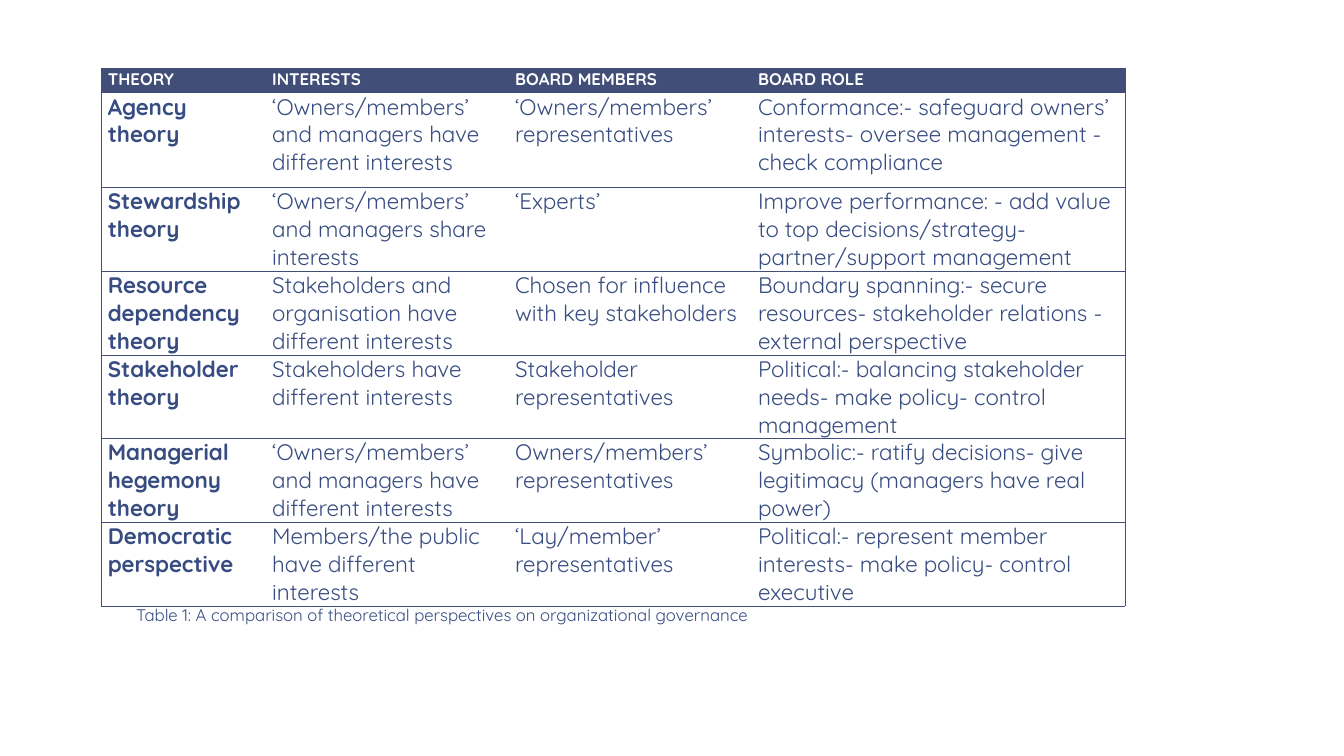
"""Build a slide with a table comparing theories of organizational governance."""
from lxml.etree import SubElement
from pptx import Presentation
from pptx.dml.color import RGBColor
from pptx.enum.text import MSO_ANCHOR, MSO_AUTO_SIZE
from pptx.oxml.ns import qn
from pptx.util import Inches, Pt

HEADERS = ["THEORY", "INTERESTS", "BOARD MEMBERS", "BOARD ROLE"]
THEORIES = [
    ("Agency theory", "‘Owners/members’ and managers have different interests",
     "‘Owners/members’ representatives",
     "Conformance:- safeguard owners’ interests- oversee management - check compliance"),
    ("Stewardship theory", "‘Owners/members’ and managers share interests",
     "‘Experts’",
     "Improve performance: - add value to top decisions/strategy- partner/support management"),
    ("Resource dependency theory", "Stakeholders and organisation have different interests",
     "Chosen for influence with key stakeholders",
     "Boundary spanning:- secure resources- stakeholder relations - external perspective"),
    ("Stakeholder theory", "Stakeholders have different interests",
     "Stakeholder representatives",
     "Political:- balancing stakeholder needs- make policy- control management"),
    ("Managerial hegemony theory", "‘Owners/members’ and managers have different interests",
     "Owners/members’ representatives",
     "Symbolic:- ratify decisions- give legitimacy (managers have real power)"),
    ("Democratic perspective", "Members/the public have different interests",
     "‘Lay/member’ representatives",
     "Political:- represent member interests- make policy- control executive"),
]
CAPTION = "Table 1: A comparison of theoretical perspectives on organizational governance"
COLUMN_WIDTHS = [1.63, 2.41, 2.41, 3.71]
ROW_HEIGHTS = [0.24, 0.94] + [0.83] * 5
FONT, INK, RULE, WHITE = "Quicksand", "374C81", "414E77", "FFFFFF"


def color(value):
    return RGBColor.from_string(value)


def add_span(para, text, size, ink, bold=False):
    span = para.add_run()
    span.text = text
    span.font.name = FONT
    span.font.size = Pt(size)
    span.font.bold = bold
    span.font.color.rgb = color(ink)


def set_borders(cell, first, last):
    properties = cell._tc.get_or_add_tcPr()
    for side, shown in (("L", first), ("R", last), ("T", True), ("B", True)):
        line = SubElement(properties, qn(f"a:ln{side}"), w=str(Pt(0.5)))
        if shown:
            fill = SubElement(line, qn("a:solidFill"))
            SubElement(fill, qn("a:srgbClr"), val=RULE)
        else:
            SubElement(line, qn("a:noFill"))


def add_theory_table(page):
    rows = [HEADERS] + THEORIES
    frame = page.shapes.add_table(
        len(rows), len(HEADERS), Inches(1), Inches(0.68),
        Inches(sum(COLUMN_WIDTHS)), Inches(sum(ROW_HEIGHTS)))
    table = frame.table
    table.horz_banding = False
    for column, width in zip(table.columns, COLUMN_WIDTHS):
        column.width = Inches(width)
    for row, height in zip(table.rows, ROW_HEIGHTS):
        row.height = Inches(height)
    for r, texts in enumerate(rows):
        header = r == 0
        for c, text in enumerate(texts):
            cell = table.cell(r, c)
            cell.margin_left = cell.margin_right = Inches(0.07)
            cell.margin_top = cell.margin_bottom = 0
            set_borders(cell, c == 0, c == len(texts) - 1)
            if header:
                cell.fill.solid()
                cell.fill.fore_color.rgb = color(RULE)
            else:
                cell.fill.background()
            add_span(cell.text_frame.paragraphs[0], text, 12 if header else 16,
                     WHITE if header else INK, header or c == 0)


def add_caption(page):
    box = page.placeholders[1]
    box.left, box.top = Inches(1.22), Inches(5.93)
    box.width, box.height = Inches(9.94), Inches(0.35)
    text_frame = box.text_frame
    text_frame.auto_size = MSO_AUTO_SIZE.NONE
    text_frame.vertical_anchor = MSO_ANCHOR.MIDDLE
    text_frame.margin_left = text_frame.margin_right = Inches(0.13)
    text_frame.margin_top = text_frame.margin_bottom = 0
    para = text_frame.paragraphs[0]
    properties = para._p.get_or_add_pPr()
    properties.set("marL", "0")
    properties.set("indent", "0")
    SubElement(properties, qn("a:buNone"))
    para.line_spacing = 0.95
    para.space_before = Pt(0)
    add_span(para, CAPTION, 12, INK)


def main():
    deck = Presentation()
    deck.slide_width, deck.slide_height = Inches(13.33), Inches(7.5)
    page = deck.slides.add_slide(deck.slide_layouts[1])
    page.background.fill.solid()
    page.background.fill.fore_color.rgb = color(WHITE)
    title = page.shapes.title._element
    title.getparent().remove(title)
    add_caption(page)
    add_theory_table(page)
    deck.save("out.pptx")


if __name__ == "__main__":
    main()
